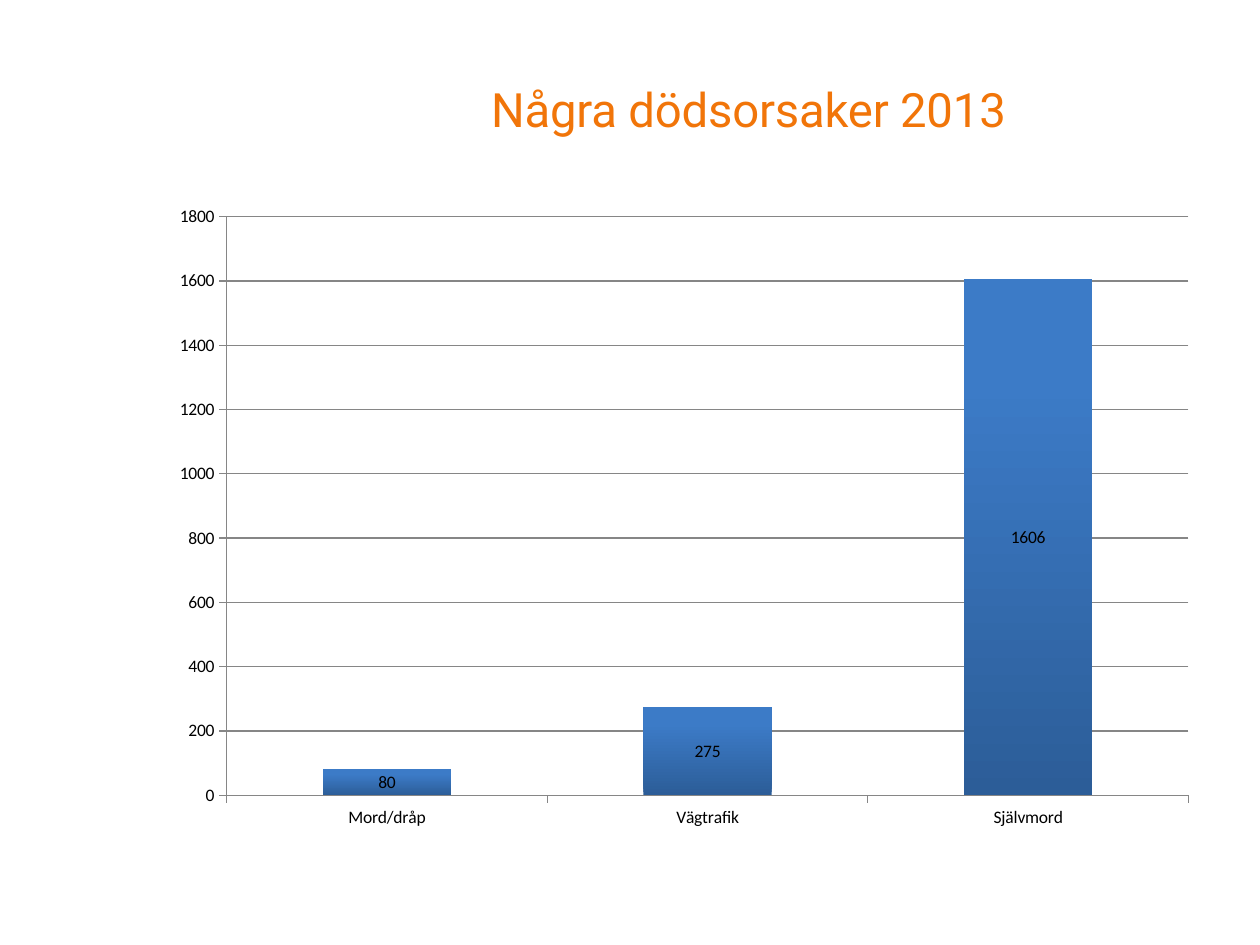
from pptx import Presentation
from pptx.chart.data import CategoryChartData
from pptx.dml.color import RGBColor
from pptx.enum.chart import XL_CHART_TYPE, XL_LABEL_POSITION, XL_TICK_MARK
from pptx.enum.text import MSO_ANCHOR, PP_ALIGN
from pptx.util import Cm, Pt


def rgb(value):
    """Return the colour for a hex string."""
    return RGBColor.from_string(value)


def add_title(s, x, y, w, h, text):
    """Place the heading in the given box."""
    tf = s.shapes.add_textbox(Cm(x), Cm(y), Cm(w), Cm(h)).text_frame
    tf.word_wrap = True
    tf.vertical_anchor = MSO_ANCHOR.MIDDLE
    p = tf.paragraphs[0]
    p.alignment = PP_ALIGN.LEFT
    p.line_spacing = 0.9
    r = p.add_run()
    r.text = text
    r.font.name = "Roboto"
    r.font.size = Pt(27)
    r.font.color.rgb = rgb("F17509")
    r.font._element.set("spc", "-10")


def style_axis(axis):
    """Give an axis its grey line and outward ticks."""
    axis.format.line.color.rgb = rgb("868686")
    axis.format.line.width = Pt(0.75)
    axis.major_tick_mark = XL_TICK_MARK.OUTSIDE
    axis.minor_tick_mark = XL_TICK_MARK.NONE


def add_causes_chart(s, x, y, w, h, causes):
    """Place the column chart of deaths by cause in the given box."""
    data = CategoryChartData()
    data.categories = list(causes)
    data.add_series("Series 1", list(causes.values()))
    chart = s.shapes.add_chart(
        XL_CHART_TYPE.COLUMN_STACKED, Cm(x), Cm(y), Cm(w), Cm(h), data
    ).chart
    chart.has_legend = False
    chart.has_title = False
    chart.font.name = "Calibri"
    chart.font.size = Pt(10)
    chart.font.color.rgb = rgb("000000")

    for axis in (chart.category_axis, chart.value_axis):
        style_axis(axis)
    axis = chart.value_axis
    axis.minimum_scale, axis.maximum_scale, axis.major_unit = 0, 1800, 200
    axis.has_major_gridlines = True
    grid = axis.major_gridlines.format.line
    grid.color.rgb = rgb("868686")
    grid.width = Pt(0.75)

    plot = chart.plots[0]
    plot.vary_by_categories = False
    plot.gap_width = 150
    plot.overlap = 100
    plot.has_data_labels = True
    plot.data_labels.show_value = True
    plot.data_labels.position = XL_LABEL_POSITION.CENTER

    fill = plot.series[0].format.fill
    fill.gradient()
    fill.gradient_angle = 90
    stops = ((0, "2C5D98"), (0.8, "3C7BC7"))
    for stop, (position, color) in zip(fill.gradient_stops, stops):
        stop.position = position
        stop.color.rgb = rgb(color)


def main():
    """Build the slide and save it."""
    prs = Presentation()
    prs.slide_width, prs.slide_height = Cm(25.4), Cm(19.05)
    s = prs.slides.add_slide(prs.slide_layouts[6])
    add_title(s, 9.65, 0.76, 14.5, 3, "Några dödsorsaker 2013")
    causes = {"Mord/dråp": 80, "Vägtrafik": 275, "Självmord": 1606}
    add_causes_chart(s, 3.2, 3.91, 21.18, 13.03, causes)
    prs.save("out.pptx")


if __name__ == "__main__":
    main()
